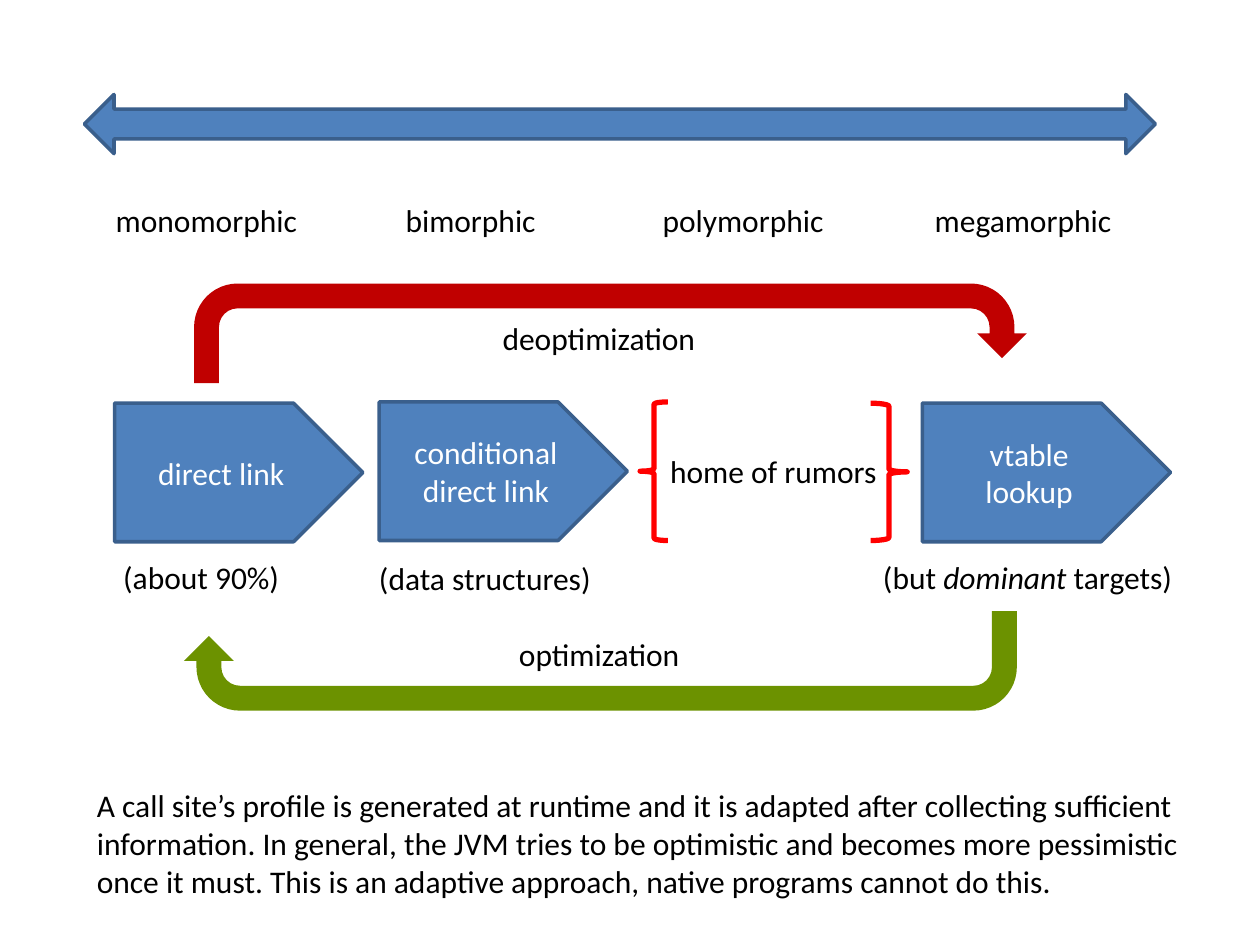
from pptx import Presentation
from pptx.dml.color import RGBColor
from pptx.enum.shapes import MSO_SHAPE
from pptx.enum.text import MSO_ANCHOR, MSO_AUTO_SIZE, PP_ALIGN
from pptx.util import Inches, Pt

DOUBLE_ARROW = MSO_SHAPE.LEFT_RIGHT_ARROW
PENTAGON = MSO_SHAPE.PENTAGON
U_TURN = MSO_SHAPE.U_TURN_ARROW
LEFT_BRACE = MSO_SHAPE.LEFT_BRACE
RIGHT_BRACE = MSO_SHAPE.RIGHT_BRACE
MIDDLE = MSO_ANCHOR.MIDDLE
CENTER = PP_ALIGN.CENTER
LEFT = PP_ALIGN.LEFT
GROW = MSO_AUTO_SIZE.SHAPE_TO_FIT_TEXT

COLORS = {
    "blue": "4F81BD",
    "outline": "3A5F8C",
    "deoptimize": "C00000",
    "optimize": "6C9200",
    "brace": "FF0000",
    "text": "000000",
    "light": "FFFFFF",
}
FONT = "Calibri"
BLANK_LAYOUT = 6


def rgb(name):
    return RGBColor.from_string(COLORS[name])


def write_text(frame, lines, color="text", align=LEFT):
    for index, line in enumerate(lines):
        para = frame.paragraphs[0] if index == 0 else frame.add_paragraph()
        para.alignment = align
        for position, part in enumerate(line.split("*")):
            span = para.add_run()
            span.text = part
            span.font.name = FONT
            span.font.size = Pt(18)
            span.font.italic = position % 2 == 1
            span.font.color.rgb = rgb(color)


def add_label(page, text, left, top, width, height=0.4):
    box = page.shapes.add_textbox(
        Inches(left), Inches(top), Inches(width), Inches(height))
    box.text_frame.word_wrap = False
    box.text_frame.auto_size = GROW
    write_text(box.text_frame, text.split("\n"))


def add_figure(page, kind, left, top, width, height,
               fill=None, line=None, weight=2, rotation=0):
    figure = page.shapes.add_shape(
        kind, Inches(left), Inches(top), Inches(width), Inches(height))
    figure.shadow.inherit = False
    figure.rotation = rotation
    if fill:
        figure.fill.solid()
        figure.fill.fore_color.rgb = rgb(fill)
    else:
        figure.fill.background()
    if line:
        figure.line.color.rgb = rgb(line)
        figure.line.width = Pt(weight)
    else:
        figure.line.fill.background()
    return figure


def add_step(page, text, left, top):
    step = add_figure(page, PENTAGON, left, top, 1.97, 1.1, "blue", "outline")
    step.text_frame.word_wrap = True
    step.text_frame.vertical_anchor = MIDDLE
    write_text(step.text_frame, text.split("\n"), color="light", align=CENTER)


def main():
    deck = Presentation()
    deck.slide_width, deck.slide_height = Inches(10), Inches(7.5)
    page = deck.slides.add_slide(deck.slide_layouts[BLANK_LAYOUT])

    add_figure(page, DOUBLE_ARROW, 0.67, 0.75, 8.5, 0.47, "blue", "outline")
    for text, left, width in [
        ("monomorphic", 0.82, 1.66),
        ("bimorphic", 3.12, 1.25),
        ("polymorphic", 5.16, 1.49),
        ("megamorphic", 7.32, 1.62),
    ]:
        add_label(page, text, left, 1.55, width)

    for text, left, top in [
        ("direct link", 0.91, 3.2),
        ("conditional\ndirect link", 3.01, 3.19),
        ("vtable\nlookup", 7.32, 3.2),
    ]:
        add_step(page, text, left, top)
    for text, left, top, width in [
        ("(about 90%)", 0.88, 4.38, 1.46),
        ("(data structures)", 2.91, 4.39, 1.9),
        ("(but *dominant* targets)", 6.91, 4.38, 2.53),
    ]:
        add_label(page, text, left, top, width)

    add_figure(page, LEFT_BRACE, 5.08, 3.19, 0.22, 1.1, line="brace", weight=3)
    add_figure(page, RIGHT_BRACE, 6.91, 3.2, 0.29, 1.09, line="brace", weight=3)
    add_label(page, "home of rumors", 5.22, 3.54, 1.86)

    add_figure(page, U_TURN, 1.54, 2.25, 6.61, 0.79, "deoptimize")
    add_label(page, "deoptimization", 3.89, 2.48, 1.75)
    add_figure(page, U_TURN, 1.46, 4.85, 6.61, 0.79, "optimize", rotation=180)
    add_label(page, "optimization", 4.02, 4.99, 1.49)

    add_label(
        page,
        "A call site’s profile is generated at runtime and it is adapted "
        "after collecting sufficient\n"
        "information. In general, the JVM tries to be optimistic and becomes "
        "more pessimistic\n"
        "once it must. This is an adaptive approach, native programs cannot "
        "do this.",
        0.67, 6.19, 8.95, 1.01)

    deck.save("out.pptx")


if __name__ == "__main__":
    main()
